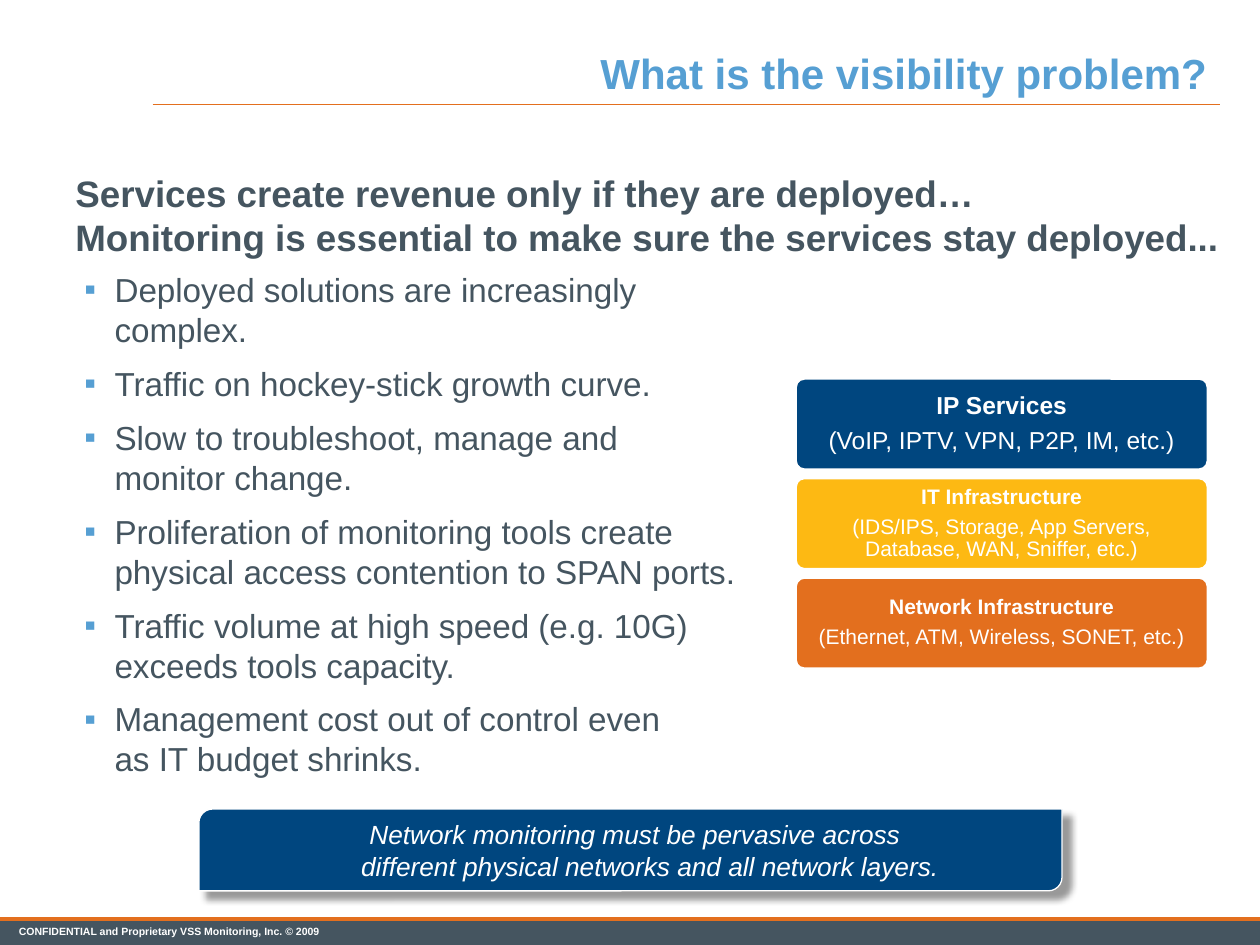
import lxml.etree
import pptx
import pptx.dml.color
import pptx.enum.shapes
import pptx.enum.text
import pptx.oxml.ns
import pptx.util

Cm = pptx.util.Cm
Pt = pptx.util.Pt
RGB = pptx.dml.color.RGBColor
SHAPE = pptx.enum.shapes.MSO_SHAPE
ALIGN = pptx.enum.text.PP_ALIGN
MIDDLE = pptx.enum.text.MSO_ANCHOR.MIDDLE
qn = pptx.oxml.ns.qn

WHITE = RGB(0xFF, 0xFF, 0xFF)
BLACK = RGB(0, 0, 0)
SKY = RGB(0x56, 0x9F, 0xD3)
SLATE = RGB(0x45, 0x55, 0x60)
NAVY = RGB(0x00, 0x46, 0x7F)
GOLD = RGB(0xFD, 0xB9, 0x13)
ORANGE = RGB(0xE3, 0x6F, 0x1E)

HEAD = ("Services create revenue only if they are deployed…\v"
        "Monitoring is essential to make sure the services stay deployed...")
POINTS = [
    "Deployed solutions are increasingly\vcomplex.",
    "Traffic on hockey-stick growth curve.",
    "Slow to troubleshoot, manage and\vmonitor change.",
    "Proliferation of monitoring tools create\vphysical access contention to SPAN ports.",
    "Traffic volume at high speed (e.g. 10G)\vexceeds tools capacity.",
    "Management cost out of control even\vas IT budget shrinks.",
]
LAYERS = [
    ("IP Services", "(VoIP, IPTV, VPN, P2P, IM, etc.)", NAVY, 14),
    ("IT Infrastructure",
     "(IDS/IPS, Storage, App Servers, Database, WAN, Sniffer, etc.)", GOLD, 12),
    ("Network Infrastructure", "(Ethernet, ATM, Wireless, SONET, etc.)", ORANGE, 12),
]


def style(para, size, color, bold=False, italic=False):
    """Set the font of a whole paragraph."""
    font = para.font
    font.name, font.size = "Arial", Pt(size)
    font.bold, font.italic = bold, italic
    font.color.rgb = color


def hang(para):
    """Give a paragraph the hanging indent of the list level."""
    props = para._p.get_or_add_pPr()
    props.set("marL", str(Cm(0.79)))
    props.set("indent", str(Cm(-0.61)))
    return props


def block(slide, kind, box, fill, edge=None, width=0.75):
    """Draw a filled shape without a shadow."""
    shape = slide.shapes.add_shape(kind, *map(Cm, box))
    shape.shadow.inherit = False
    shape.fill.solid()
    shape.fill.fore_color.rgb = fill
    if edge is None:
        shape.line.fill.background()
    else:
        shape.line.color.rgb = edge
        shape.line.width = Pt(width)
    return shape


def label(slide, box):
    """Add an empty wrapping text box and return its frame."""
    frame = slide.shapes.add_textbox(*map(Cm, box)).text_frame
    frame.word_wrap = True
    return frame


def footer(slide, box):
    """Draw the footer band with its orange edge and notice."""
    left, top, width, height = box
    block(slide, SHAPE.RECTANGLE, box, ORANGE)
    block(slide, SHAPE.RECTANGLE, (left, top + 0.08, width, height - 0.08), SLATE)
    frame = label(slide, (left + 0.13, top + 0.03, 16.13, 0.5))
    para = frame.paragraphs[0]
    para.text = "CONFIDENTIAL and Proprietary VSS Monitoring, Inc. © 2009"
    style(para, 6, WHITE, bold=True)


def header(slide, box):
    """Place the title and the rule that ends at its right edge."""
    left, top, width, height = box
    title = slide.shapes.title
    title.left, title.top, title.width, title.height = map(Cm, box)
    frame = title.text_frame
    frame.auto_size = pptx.enum.text.MSO_AUTO_SIZE.NONE
    frame.vertical_anchor = MIDDLE
    para = frame.paragraphs[0]
    para.text = "What is the visibility problem?"
    para.alignment = ALIGN.RIGHT
    style(para, 24, SKY, bold=True)
    level = Cm(top + 1.6)
    rule = slide.shapes.add_connector(
        pptx.enum.shapes.MSO_CONNECTOR.STRAIGHT,
        Cm(left - 3.35), level, Cm(left + width), level)
    rule.line.color.rgb = ORANGE
    rule.line.width = Pt(0.75)
    lxml.etree.SubElement(rule._element.spPr, qn("a:effectLst"))


def body(slide, box):
    """Write the bold statement and the bulleted points."""
    frame = label(slide, box)
    frame.margin_right = 0
    para = frame.paragraphs[0]
    para.text = HEAD
    style(para, 21, SLATE, bold=True)
    for index, point in enumerate(POINTS):
        para = frame.add_paragraph()
        para.text = point
        para.level = 1
        props = hang(para)
        tint = lxml.etree.SubElement(props, qn("a:buClr"))
        lxml.etree.SubElement(tint, qn("a:srgbClr"), val=str(SKY))
        lxml.etree.SubElement(props, qn("a:buFont"), typeface="Arial")
        lxml.etree.SubElement(props, qn("a:buChar"), char="▪")
        para.space_before = Pt(2 if index else 6)
        para.space_after = Pt(6)
        style(para, 19, SLATE)


def stack(slide, box):
    """Stack the network layers with equal gaps."""
    left, top, width, height = box
    gap = 0.15
    tall = (height - gap * (len(LAYERS) - 1)) / len(LAYERS)
    for index, (name, note, fill, size) in enumerate(LAYERS):
        place = (left, top + index * (tall + gap), width, tall)
        card = block(slide, SHAPE.ROUNDED_RECTANGLE, place, fill, WHITE, 2)
        card.adjustments[0] = 0.1
        frame = card.text_frame
        frame.word_wrap = True
        frame.vertical_anchor = MIDDLE
        frame.margin_left = frame.margin_right = Cm(0.13)
        frame.margin_top = frame.margin_bottom = Cm(0.13)
        frame.text = name + "\n" + note
        for para, bold in zip(frame.paragraphs, (True, False)):
            para.alignment = ALIGN.CENTER
            para.line_spacing = 0.9
            para.space_after = Pt(size * 0.35)
            style(para, size, WHITE, bold=bold)


def banner(slide, box):
    """Draw the closing message with its soft shadow."""
    shape = block(slide, SHAPE.ROUND_2_DIAG_RECTANGLE, box, NAVY, WHITE)
    glow = lxml.etree.SubElement(
        shape._element.spPr.find(qn("a:effectLst")), qn("a:outerShdw"),
        blurRad=str(Pt(4)), dist=str(Pt(6)), dir="2700000",
        algn="tl", rotWithShape="0")
    tint = lxml.etree.SubElement(glow, qn("a:srgbClr"), val=str(BLACK))
    lxml.etree.SubElement(tint, qn("a:alpha"), val="40000")
    frame = shape.text_frame
    frame.word_wrap = True
    frame.vertical_anchor = MIDDLE
    para = frame.paragraphs[0]
    para.text = ("Network monitoring must be pervasive across\v"
                 "different physical networks and all network layers.")
    para.level = 1
    para.alignment = ALIGN.CENTER
    hang(para)
    style(para, 15, WHITE, italic=True)


def main():
    """Build the slide and save it."""
    deck = pptx.Presentation()
    deck.slide_width, deck.slide_height = Cm(25.4), Cm(19.05)
    slide = deck.slides.add_slide(deck.slide_layouts[5])
    footer(slide, (0, 18.49, 25.4, 0.56))
    header(slide, (6.43, 0.51, 18.16, 1.9))
    body(slide, (1.27, 3.32, 24.13, 13.7))
    stack(slide, (16.03, 7.62, 8.33, 5.87))
    banner(slide, (4.01, 16.31, 17.4, 1.65))
    deck.save("out.pptx")


if __name__ == "__main__":
    main()
